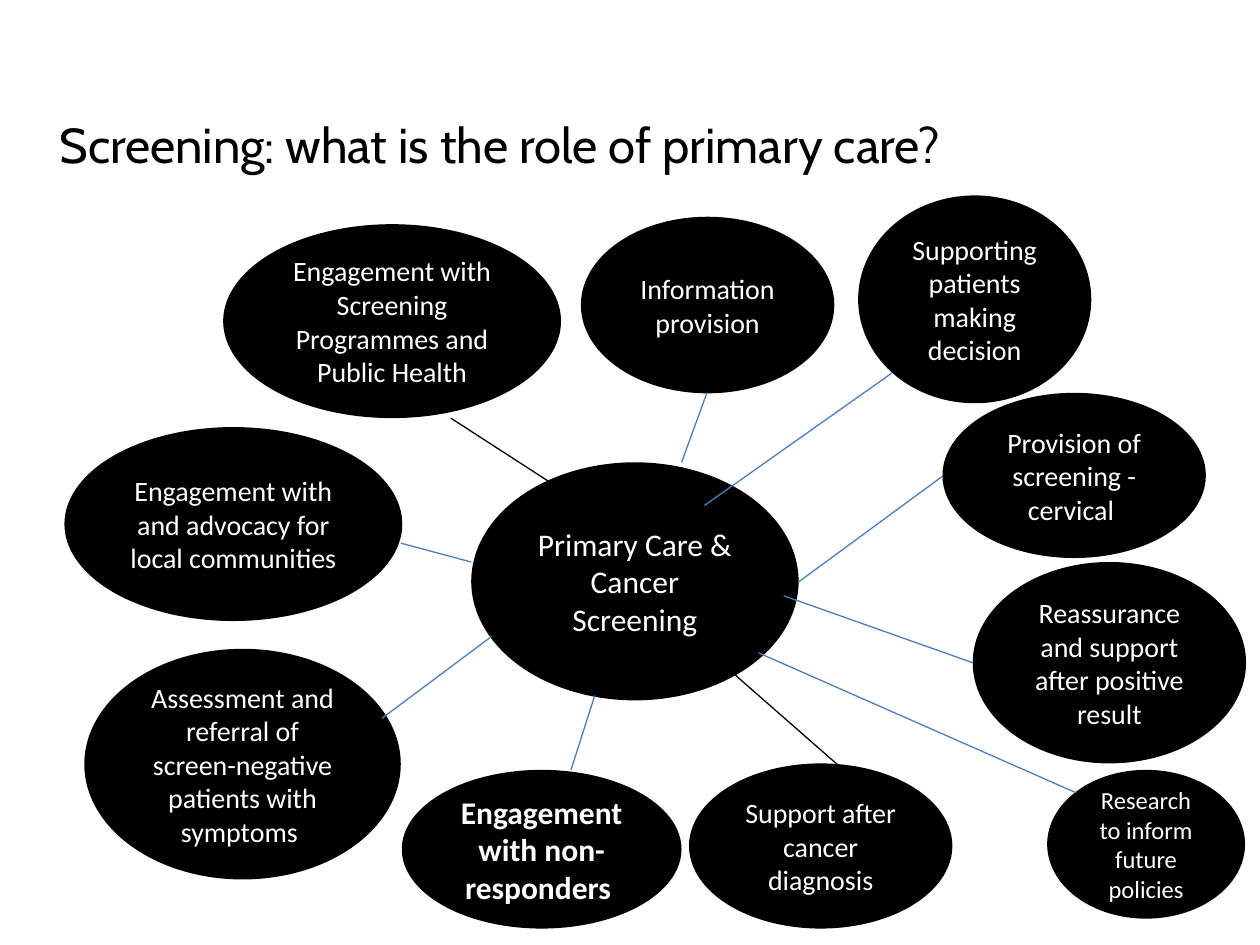
from lxml.etree import SubElement
from pptx import Presentation
from pptx.dml.color import RGBColor
from pptx.enum.shapes import MSO_CONNECTOR, MSO_SHAPE
from pptx.enum.text import MSO_ANCHOR, PP_ALIGN
from pptx.oxml.ns import qn
from pptx.util import Cm, Pt

BLACK, WHITE, BLUE = "000000", "FFFFFF", "4B7EBC"

# Ellipses: text, (left, top, width, height) in cm, text format
ROLES = [
    ("Primary Care & Cancer Screening", (9.5, 9.32, 6.6, 4.8), {"size": 18}),
    ("Reassurance and support after positive result", (19.61, 11.33, 5.51, 4.06), {}),
    ("Engagement with and advocacy for local communities", (1.3, 8.61, 6.81, 3.91), {}),
    ("Engagement with non-responders ", (8.1, 15.52, 5.64, 3.2), {"size": 18, "bold": True}),
    ("Supporting patients making decision", (17.3, 3.94, 4.7, 4.19), {}),
    ("Information provision", (11.71, 4.37, 5.11, 3.56), {}),
    ("Assessment and referral of screen-negative patients with symptoms ",
     (1.7, 13.08, 6.38, 4.65), {}),
    ("Support after cancer diagnosis", (13.89, 15.39, 5.31, 3.33), {}),
    ("Engagement with Screening Programmes and Public Health", (4.5, 4.52, 6.81, 3.91), {}),
    ("Provision of screening - cervical ", (19, 7.92, 5.31, 3.33), {}),
    ("Research to inform future policies", (21.11, 15.52, 3.99, 3), {"size": 14}),
]

# Lines between the roles and the centre: (x1, y1, x2, y2) in cm, colour
LINKS = [
    ((9.09, 8.43, 11.1, 9.73), BLACK),
    ((14.71, 13.51, 16.89, 15.42), BLACK),
    ((14.25, 7.92, 13.74, 9.32), BLUE),
    ((17.98, 7.52, 14.2, 10.19), BLUE),
    ((19.61, 13.36, 15.8, 12.01), BLUE),
    ((8.08, 10.95, 9.5, 11.33), BLUE),
    ((7.7, 14.48, 9.91, 12.83), BLUE),
    ((11.51, 15.52, 11.99, 14.02), BLUE),
    ((19, 9.6, 16.1, 11.73), BLUE),
    ((21.69, 15.98, 15.29, 13.16), BLUE),
]


def paint(color_format, value):
    color_format.rgb = RGBColor.from_string(value)


def write(frame, text, size=16, font="Calibri", color=WHITE, bold=False,
          align=PP_ALIGN.CENTER, anchor=MSO_ANCHOR.MIDDLE):
    frame.word_wrap = True
    frame.vertical_anchor = anchor
    para = frame.paragraphs[0]
    para.alignment = align
    span = para.add_run()
    span.text = text
    span.font.name = font
    span.font.size = Pt(size)
    span.font.bold = bold
    paint(span.font.color, color)


def add_title(page, text):
    box = page.shapes.add_textbox(Cm(1.2), Cm(1.2), Cm(22.8), Cm(2.3))
    frame = box.text_frame
    frame.margin_left = frame.margin_right = frame.margin_top = frame.margin_bottom = 0
    write(frame, text, size=28, font="Cabin", color=BLACK,
          align=PP_ALIGN.LEFT, anchor=MSO_ANCHOR.BOTTOM)


def add_role(page, text, bounds, text_format):
    ellipse = page.shapes.add_shape(MSO_SHAPE.OVAL, *map(Cm, bounds))
    ellipse.shadow.inherit = False
    ellipse.fill.solid()
    paint(ellipse.fill.fore_color, BLACK)
    ellipse.line.fill.background()
    write(ellipse.text_frame, text, **text_format)


def add_link(page, ends, color):
    link = page.shapes.add_connector(MSO_CONNECTOR.STRAIGHT, *map(Cm, ends))
    paint(link.line.color, color)
    link.line.width = Pt(0.75)
    # An empty effect list switches off the theme shadow
    SubElement(link._element.spPr, qn("a:effectLst"))


def main():
    deck = Presentation()
    deck.slide_width, deck.slide_height = Cm(25.4), Cm(19.05)
    page = deck.slides.add_slide(deck.slide_layouts[6])

    add_title(page, "Screening: what is the role of primary care?")
    for text, bounds, text_format in ROLES:
        add_role(page, text, bounds, text_format)
    for ends, color in LINKS:
        add_link(page, ends, color)

    deck.save("out.pptx")


if __name__ == "__main__":
    main()
